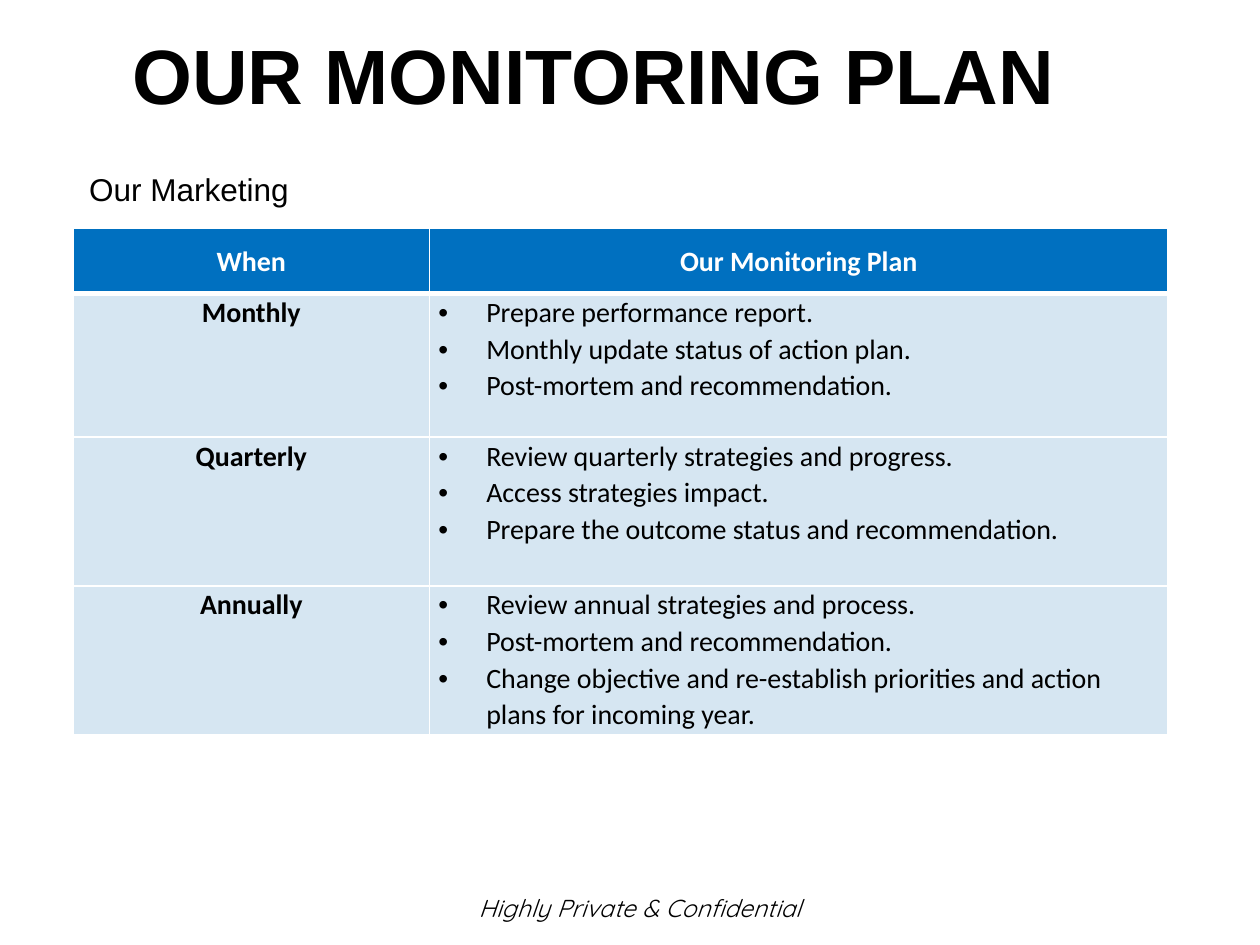
from lxml import etree
from pptx import Presentation
from pptx import util as u
from pptx.dml.color import RGBColor
from pptx.enum import text
from pptx.oxml import ns

TITLE = "OUR MONITORING PLAN"
SUBTITLE = "Our Marketing"
FOOTER = "Highly Private & Confidential"
HEADERS = ["When", "Our Monitoring Plan"]
PLAN = [
    ("Monthly", [
        "Prepare performance report.",
        "Monthly update status of action plan.",
        "Post-mortem and recommendation.",
    ]),
    ("Quarterly", [
        "Review quarterly strategies and progress.",
        "Access strategies impact.",
        "Prepare the outcome status and recommendation.",
    ]),
    ("Annually", [
        "Review annual strategies and process.",
        "Post-mortem and recommendation.",
        "Change objective and re-establish priorities and action plans for incoming year.",
    ]),
]
COLUMN_WIDTHS = [2.83, 5.86]
ROW_HEIGHTS = [0.52, 1.14, 1.18, 1.18]
BLACK, WHITE, BLUE, PALE = "000000", "FFFFFF", "0070C0", "D6E6F2"
CENTER = text.PP_ALIGN.CENTER
TOP, MIDDLE = text.MSO_ANCHOR.TOP, text.MSO_ANCHOR.MIDDLE


def color(value):
    return RGBColor.from_string(value)


def add_run(paragraph, content, size, font, ink=BLACK, bold=False, italic=False):
    run = paragraph.add_run()
    run.text = content
    run.font.size, run.font.name = u.Pt(size), font
    run.font.bold, run.font.italic = bold, italic
    run.font.color.rgb = color(ink)


def add_label(slide, content, box, size, font, anchor=TOP, wrap=True, italic=False):
    shape = slide.shapes.add_textbox(*map(u.Inches, box))
    frame = shape.text_frame
    frame.word_wrap, frame.vertical_anchor = wrap, anchor
    add_run(frame.paragraphs[0], content, size, font, italic=italic)
    return frame


def add_border(cell, side, points):
    line = etree.SubElement(cell._tc.get_or_add_tcPr(), ns.qn(f"a:{side}"), w=str(u.Pt(points)))
    fill = etree.SubElement(line, ns.qn("a:solidFill"))
    etree.SubElement(fill, ns.qn("a:srgbClr"), val=WHITE)


def add_bullet(paragraph):
    properties = paragraph._p.get_or_add_pPr()
    properties.set("marL", str(u.Inches(0.38)))
    properties.set("indent", str(-u.Inches(0.38)))
    etree.SubElement(properties, ns.qn("a:buFont"), typeface="Arial")
    etree.SubElement(properties, ns.qn("a:buChar"), char="•")


def fill_cell(cell, lines, row, bulleted):
    header = row == 0
    cell.margin_left = cell.margin_right = u.Inches(0.07)
    cell.margin_top = cell.margin_bottom = 0
    cell.vertical_anchor = MIDDLE if header else TOP
    for side in ("lnL", "lnR", "lnT", "lnB"):
        under_header = (row, side) in ((0, "lnB"), (1, "lnT"))
        add_border(cell, side, 3 if under_header else 1)
    cell.fill.solid()
    cell.fill.fore_color.rgb = color(BLUE if header else PALE)
    frame = cell.text_frame
    for index, line in enumerate(lines):
        paragraph = frame.add_paragraph() if index else frame.paragraphs[0]
        paragraph.line_spacing = 1.07
        if bulleted:
            add_bullet(paragraph)
        else:
            paragraph.alignment = CENTER
        add_run(paragraph, line, 16, "Calibri", WHITE if header else BLACK, not bulleted)


def add_plan_table(slide):
    rows = [[[header] for header in HEADERS]] + [[[when], tasks] for when, tasks in PLAN]
    box = (0.58, 1.81, sum(COLUMN_WIDTHS), sum(ROW_HEIGHTS))
    table = slide.shapes.add_table(len(rows), len(HEADERS), *map(u.Inches, box)).table
    table.horz_banding = False
    for column, width in zip(table.columns, COLUMN_WIDTHS):
        column.width = u.Inches(width)
    for row, height in zip(table.rows, ROW_HEIGHTS):
        row.height = u.Inches(height)
    for row, cells in enumerate(rows):
        for column, lines in enumerate(cells):
            fill_cell(table.cell(row, column), lines, row, row > 0 and column == 1)


def main():
    presentation = Presentation()
    presentation.slide_width, presentation.slide_height = u.Inches(10), u.Inches(7.5)
    slide = presentation.slides.add_slide(presentation.slide_layouts[5])

    footer = add_label(slide, FOOTER, (3.7, 7.09, 3.37, 0.23), 14, "Quicksand", MIDDLE, italic=True)
    footer.margin_top = footer.margin_bottom = u.Inches(0.1)

    title = slide.shapes.title
    title.left, title.top, title.width, title.height = map(u.Inches, (0.42, 0.17, 8.59, 0.83))
    title.text_frame.vertical_anchor = TOP
    title.text_frame.auto_size = text.MSO_AUTO_SIZE.NONE
    heading = title.text_frame.paragraphs[0]
    heading.alignment = CENTER
    add_run(heading, TITLE, 44, "Arial", bold=True)

    add_plan_table(slide)
    subtitle = add_label(slide, SUBTITLE, (0.61, 1.3, 1.96, 0.4), 18, "Arial", wrap=False)
    subtitle.auto_size = text.MSO_AUTO_SIZE.SHAPE_TO_FIT_TEXT
    presentation.save("out.pptx")


if __name__ == "__main__":
    main()
